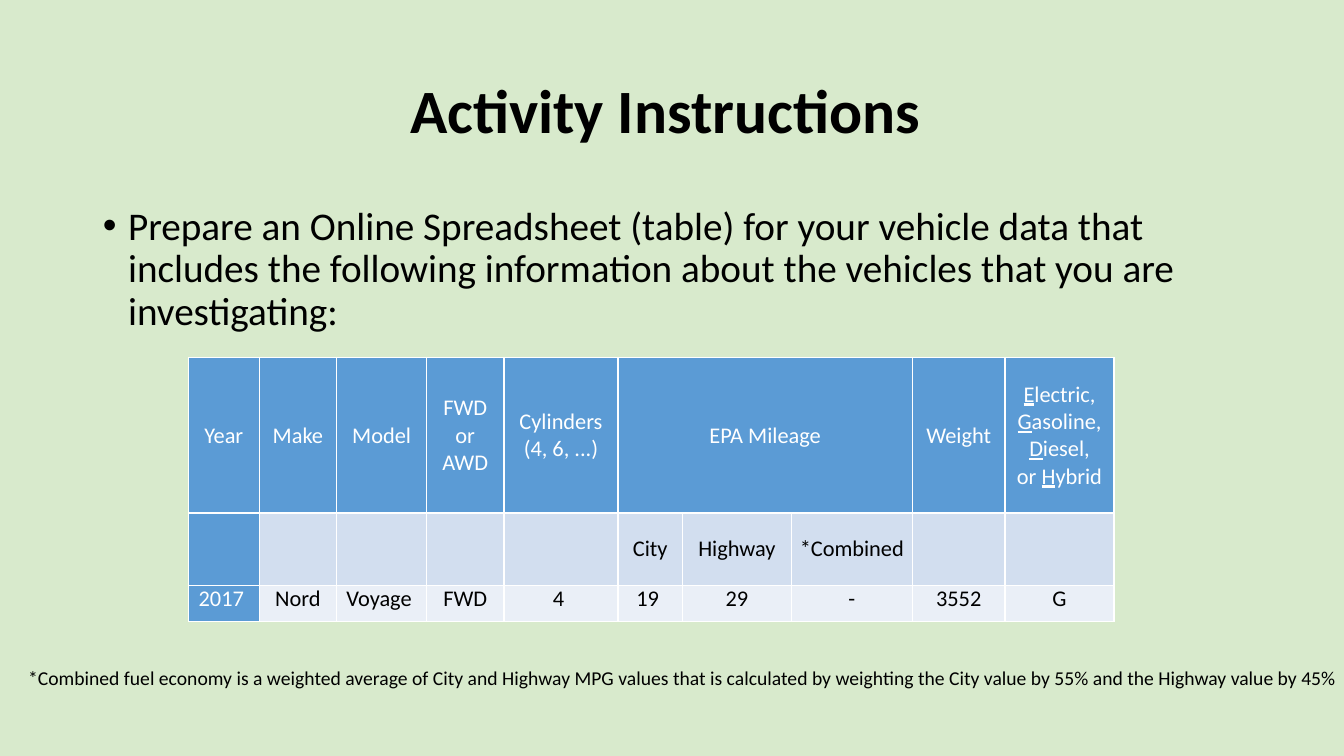
from pptx import Presentation
from pptx.dml.color import RGBColor
from pptx.enum.text import MSO_ANCHOR, MSO_AUTO_SIZE, PP_ALIGN
from pptx.util import Inches, Pt

MIDDLE, TOP = MSO_ANCHOR.MIDDLE, MSO_ANCHOR.TOP
CENTER, LEFT = PP_ALIGN.CENTER, PP_ALIGN.LEFT
NO_FIT, GROW = MSO_AUTO_SIZE.NONE, MSO_AUTO_SIZE.SHAPE_TO_FIT_TEXT

BLACK = RGBColor(0x00, 0x00, 0x00)
WHITE = RGBColor(0xFF, 0xFF, 0xFF)
PALE_GREEN = RGBColor(0xD8, 0xEA, 0xCC)
BLUE = RGBColor(0x5B, 0x9B, 0xD5)
BAND_DARK = RGBColor(0xD2, 0xDE, 0xEF)
BAND_LIGHT = RGBColor(0xEA, 0xEF, 0xF7)

COLUMN_WIDTHS = [0.7, 0.77, 0.89, 0.77, 1.13, 0.64, 1.08, 1.2, 0.92, 1.08]
ROW_HEIGHTS = [1.54, 0.72, 0.36]
ROW_FILLS = [BLUE, BAND_DARK, BAND_LIGHT]
VEHICLE_ROWS = [
    ["Year", "Make", "Model", "FWD\nor\nAWD", "Cylinders\n(4, 6, ...)", "EPA Mileage", "", "",
     "Weight", "_E_lectric, _G_asoline, _D_iesel,\nor _H_ybrid"],
    ["", "", "", "", "", "City", "Highway", "*Combined", "", ""],
    ["2017 ", "Nord", "Voyage ", "FWD", "4 ", "19 ", "29", "-", "3552", "G"],
]


def place(shape, left, top, width, height):
    shape.left, shape.top = Inches(left), Inches(top)
    shape.width, shape.height = Inches(width), Inches(height)


def style_text(text_frame, size, color, alignment, bold=False):
    for paragraph in text_frame.paragraphs:
        paragraph.alignment = alignment
        for font in [paragraph.font] + [run.font for run in paragraph.runs]:
            font.name = "Calibri"
            font.size = Pt(size)
            font.bold = bold
            font.color.rgb = color


presentation = Presentation()
presentation.slide_width = Inches(13.33)
presentation.slide_height = Inches(7.5)
slide = presentation.slides.add_slide(presentation.slide_layouts[1])
slide.background.fill.solid()
slide.background.fill.fore_color.rgb = PALE_GREEN

title = slide.shapes.title
place(title, 0.92, 0.4, 11.5, 1.45)
title.text_frame.text = "Activity Instructions "
title.text_frame.vertical_anchor = MIDDLE
title.text_frame.auto_size = NO_FIT
title.text_frame.paragraphs[0].line_spacing = 0.9
style_text(title.text_frame, 44, BLACK, CENTER, bold=True)

body = slide.placeholders[1]
place(body, 0.92, 2, 11.5, 4.76)
body.text_frame.text = (
    "Prepare an Online Spreadsheet (table) for your vehicle data that includes "
    "the following information about the vehicles that you are investigating:"
)
body.text_frame.auto_size = NO_FIT
instruction = body.text_frame.paragraphs[0]
instruction.line_spacing = 0.9
instruction.space_before = Pt(10)
instruction_properties = instruction._p.get_or_add_pPr()
instruction_properties.set("marL", str(Inches(0.25)))
instruction_properties.set("indent", str(-Inches(0.25)))
style_text(body.text_frame, 28, BLACK, LEFT)

table_frame = slide.shapes.add_table(
    len(ROW_HEIGHTS), len(COLUMN_WIDTHS), Inches(1.87), Inches(3.55),
    Inches(sum(COLUMN_WIDTHS)), Inches(sum(ROW_HEIGHTS)),
)
table = table_frame.table
table.first_col = True
for column, width in zip(table.columns, COLUMN_WIDTHS):
    column.width = Inches(width)
for row, height in zip(table.rows, ROW_HEIGHTS):
    row.height = Inches(height)
table.cell(0, 5).merge(table.cell(0, 7))

for row_index, values in enumerate(VEHICLE_ROWS):
    for column_index, value in enumerate(values):
        cell = table.cell(row_index, column_index)
        is_heading = row_index == 0 or column_index == 0
        cell.fill.solid()
        cell.fill.fore_color.rgb = BLUE if is_heading else ROW_FILLS[row_index]
        cell.margin_left = cell.margin_right = Inches(0.07)
        cell.margin_top = cell.margin_bottom = 0
        cell.vertical_anchor = TOP if row_index == 2 else MIDDLE
        cell.text_frame.text = value
        for paragraph in cell.text_frame.paragraphs:
            if "_" in paragraph.text:
                pieces = paragraph.text.split("_")
                paragraph.text = ""
                for piece_index, piece in enumerate(pieces):
                    if piece:
                        run = paragraph.add_run()
                        run.text = piece
                        run.font.underline = piece_index % 2 == 1
        style_text(cell.text_frame, 16, WHITE if is_heading else BLACK, CENTER)

footnote = slide.shapes.add_textbox(Inches(0.18), Inches(6.56), Inches(13.31), Inches(0.57))
footnote.text_frame.text = (
    "*Combined fuel economy is a weighted average of City and Highway MPG values that is "
    "calculated by weighting the City value by 55% and the Highway value by 45%"
)
footnote.text_frame.word_wrap = False
footnote.text_frame.auto_size = GROW
style_text(footnote.text_frame, 14, BLACK, LEFT)

presentation.save("out.pptx")
